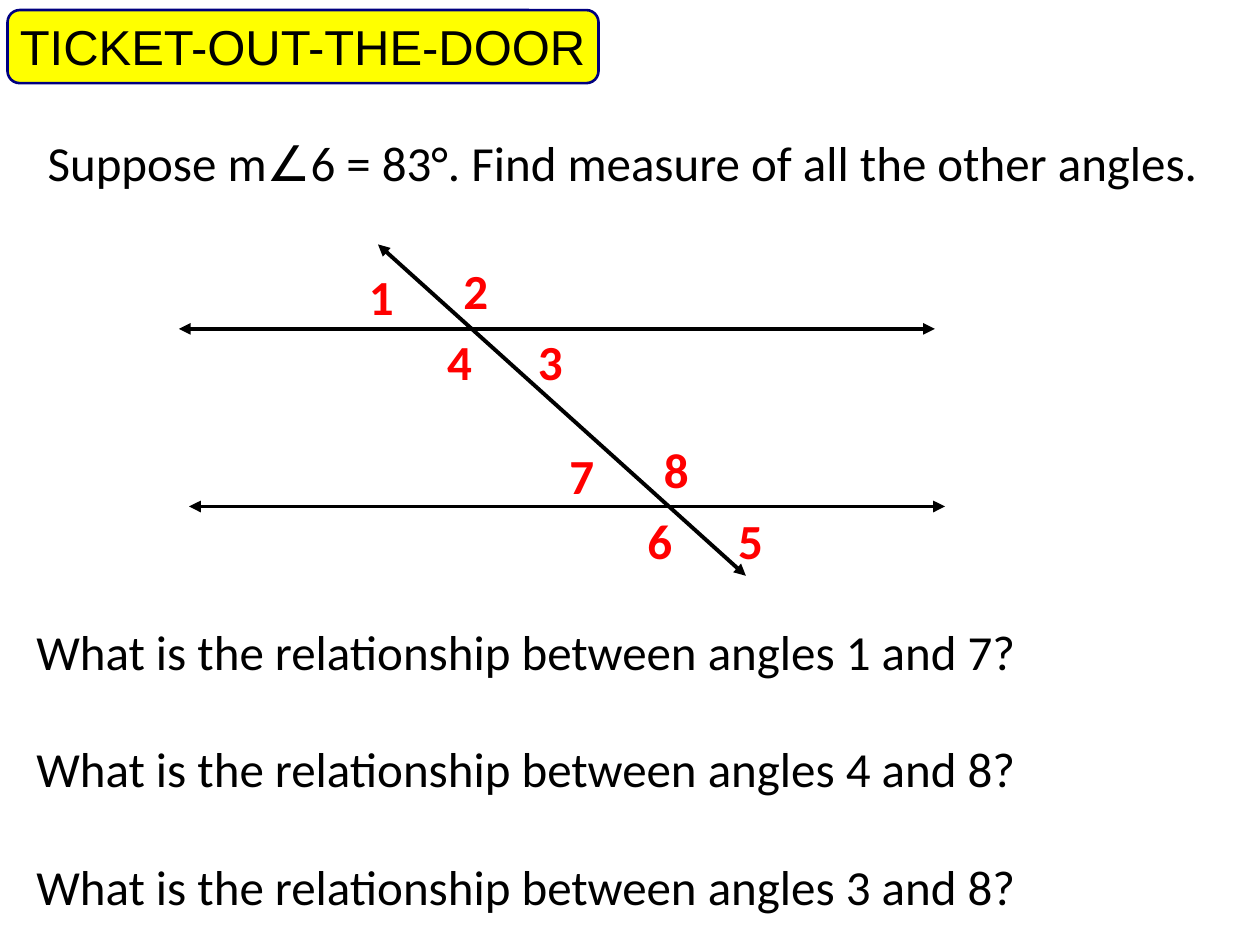
from lxml import etree
from pptx import Presentation
from pptx import util as u
from pptx.dml.color import RGBColor
from pptx.enum import shapes, text
from pptx.oxml.ns import qn

COLS, ROWS = 100, 75
WIDE, HIGH = u.Inches(10), u.Inches(7.5)
HUES = {"ink": "000000", "mark": "FF0000", "fill": "FFFF00", "edge": "000080"}
PAIRS = [(1, 7), (4, 8), (3, 8)]
SPOTS = [(0, 0), (7.5, -0.5), (13.4, 5.1), (6.2, 5.1)]


def hue(name):
    return RGBColor.from_string(HUES[name])


def grid(*cells):
    sides = (WIDE / COLS, HIGH / ROWS)
    return [round(cell * sides[i % 2]) for i, cell in enumerate(cells)]


def write(slide, area, lines, ink="ink", face="Calibri", bold=False, gap=0):
    frame = slide.shapes.add_textbox(*grid(*area)).text_frame
    frame.word_wrap = True
    frame.auto_size = text.MSO_AUTO_SIZE.SHAPE_TO_FIT_TEXT
    frame.text = "\n".join(lines)
    for i, para in enumerate(frame.paragraphs):
        font = para.font
        font.name, font.size, font.bold = face, u.Pt(28), bold
        font.color.rgb = hue(ink)
        if i and gap:
            para.space_before = u.Pt(gap)


def arrow(slide, *ends):
    line = slide.shapes.add_connector(shapes.MSO_CONNECTOR.STRAIGHT, *grid(*ends))
    line.line.color.rgb = hue("ink")
    line.line.width = u.Pt(2.25)
    props = line._element.spPr
    stroke = props.find(qn("a:ln"))
    for tip in ("a:headEnd", "a:tailEnd"):
        etree.SubElement(stroke, qn(tip), type="triangle")
    etree.SubElement(props, qn("a:effectLst"))


def badge(slide, area):
    box = slide.shapes.add_shape(shapes.MSO_SHAPE.ROUNDED_RECTANGLE, *grid(*area))
    box.shadow.inherit = False
    box.fill.solid()
    box.fill.fore_color.rgb = hue("fill")
    box.line.color.rgb = hue("edge")
    box.line.width = u.Pt(1.5)


def label(slide, left, top, names):
    for name, (x, y) in zip(names, SPOTS):
        write(slide, (left + x, top + y, 5.8, 5.7), [name], "mark", bold=True)


def main():
    deck = Presentation()
    deck.slide_width, deck.slide_height = WIDE, HIGH
    slide = deck.slides.add_slide(deck.slide_layouts[6])

    write(slide, (2.8, 10, 95.6, 5.7),
          ["Suppose m∠6 = 83°. Find measure of all the other angles."])

    for left, top in [(14.2, 26.1), (15, 40.2)]:
        arrow(slide, left, top, left + 60, top)
    arrow(slide, 30, 19.4, 59.2, 45.7)
    label(slide, 28.3, 20.7, "1234")
    label(slide, 44.2, 34.9, "7856")

    badge(slide, (0.6, 0.8, 46.9, 5.8))
    write(slide, (0.6, 0.8, 78.6, 5.7), ["TICKET-OUT-THE-DOOR"], face="Arial")

    asks = [f"What is the relationship between angles {a} and {b}?" for a, b in PAIRS]
    write(slide, (1.9, 48.8, 95.6, 24.6), asks, gap=33.6)

    deck.save("out.pptx")


if __name__ == "__main__":
    main()
